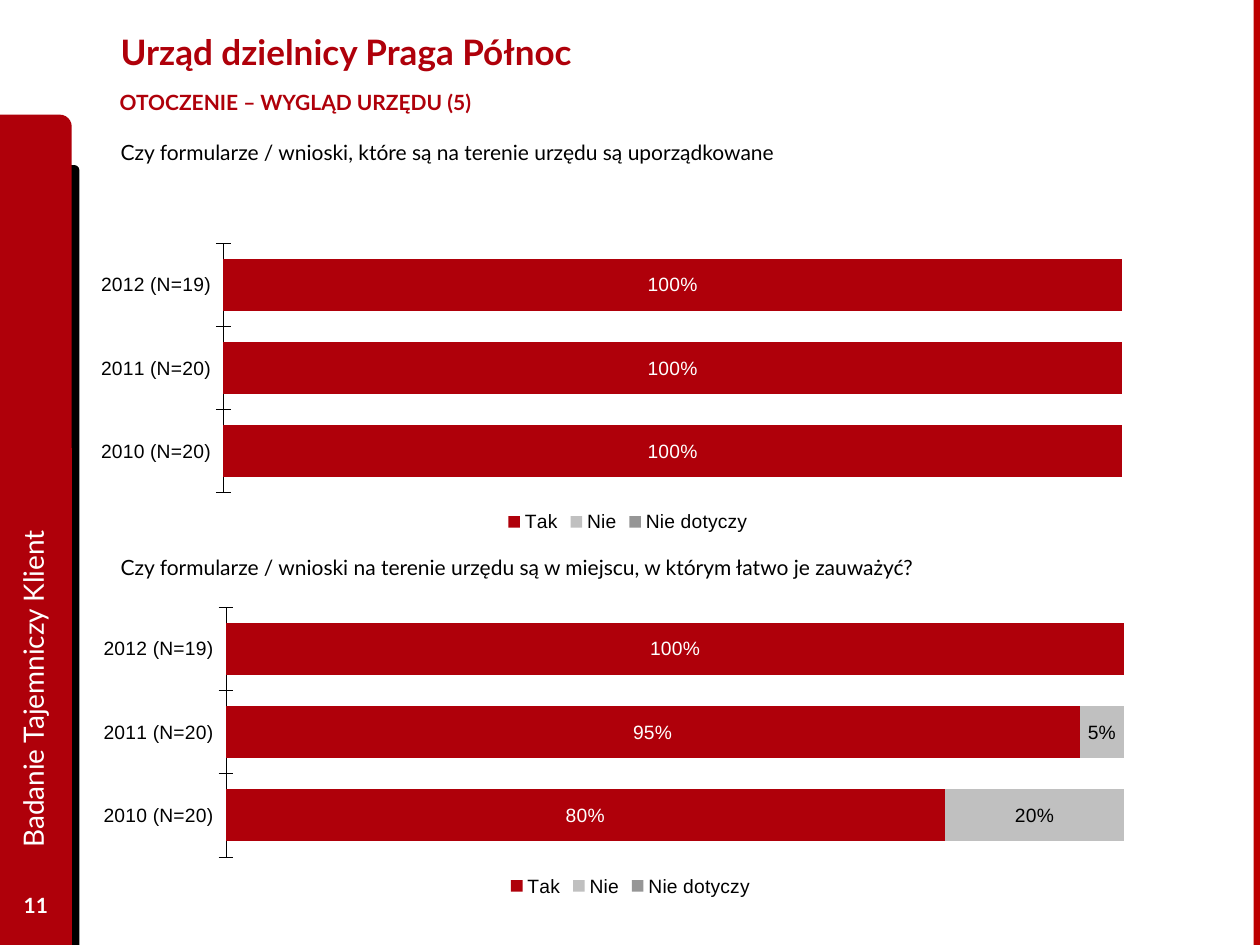
from dataclasses import dataclass

from lxml import etree
from pptx import Presentation
from pptx.chart.chart import Chart
from pptx.chart.data import CategoryChartData
from pptx.dml.color import RGBColor
from pptx.enum.chart import XL_CHART_TYPE, XL_LEGEND_POSITION, XL_TICK_MARK
from pptx.enum.shapes import MSO_SHAPE
from pptx.enum.text import MSO_ANCHOR, PP_ALIGN
from pptx.oxml.ns import qn
from pptx.slide import Slide
from pptx.util import Inches, Pt

RECTANGLE, ROUNDED_CORNER = MSO_SHAPE.RECTANGLE, MSO_SHAPE.ROUND_1_RECTANGLE
TOP, MIDDLE = MSO_ANCHOR.TOP, MSO_ANCHOR.MIDDLE
LEFT, CENTER = PP_ALIGN.LEFT, PP_ALIGN.CENTER
BAR_STACKED = XL_CHART_TYPE.BAR_STACKED
LEGEND_BOTTOM = XL_LEGEND_POSITION.BOTTOM
TICK_CROSS = XL_TICK_MARK.CROSS

COLORS = {
    "black": "000000",
    "white": "FFFFFF",
    "red": "AF000A",
    "stripe": "BD0000",
    "light_gray": "C0C0C0",
    "gray": "969696",
}
TEXT_FONT, CHART_FONT = "Lato", "Arial"
CHART_SIZE = Pt(11)
CATEGORIES = ("2012 (N=19)", "2011 (N=20)", "2010 (N=20)")
ANSWERS = (
    ("Tak", "red", "white"),
    ("Nie", "light_gray", "black"),
    ("Nie dotyczy", "gray", "black"),
)
PLOT_LAYOUT = {"x": 0.119, "y": 0.004, "w": 0.846, "h": 0.843}
NO_ANSWERS = (None, None, None)


@dataclass
class Panel:
    shape: int
    left: float
    top: float
    width: float
    height: float
    color: str


@dataclass
class Label:
    text: str
    left: float
    top: float
    width: float
    height: float
    size: int = 12
    color: str = "black"
    bold: bool = False
    anchor: int = TOP
    align: int = LEFT
    rotation: int = 0
    wrap: bool = True
    side_margin: float = 0.1


@dataclass
class AnswerChart:
    left: float
    top: float
    values: tuple


PANELS = (
    Panel(ROUNDED_CORNER, 0.39, 1.31, 0.24, 6.19, "black"),
    Panel(ROUNDED_CORNER, 0, 0.91, 0.57, 6.59, "red"),
    Panel(RECTANGLE, 9.95, 0, 0.05, 7.5, "stripe"),
)
LABELS = (
    Label("Urząd dzielnicy Praga Północ", 0.86, 0.05, 7.77, 0.72,
          size=20, color="red", bold=True, anchor=MIDDLE),
    Label("Badanie Tajemniczy Klient", -2.62, 3.69, 5.76, 0.51,
          size=16, color="white", anchor=MIDDLE, rotation=270),
    Label("11", 0, 6.98, 0.57, 0.4,
          color="white", bold=True, anchor=MIDDLE, align=CENTER),
    Label("OTOCZENIE – WYGLĄD URZĘDU (5)", 0.75, 0.66, 3.85, 0.33,
          color="red", bold=True, wrap=False, side_margin=0.2),
    Label("Czy formularze / wnioski, które są na terenie urzędu są uporządkowane",
          0.86, 1.06, 5.83, 0.3),
    Label("Czy formularze / wnioski na terenie urzędu są w miejscu, "
          "w którym łatwo je zauważyć?", 0.86, 4.35, 7.87, 0.3),
)
CHARTS = (
    AnswerChart(0.77, 1.92, ((1, 1, 1), NO_ANSWERS, NO_ANSWERS)),
    AnswerChart(0.79, 4.81, ((1, 0.95, 0.8), (None, 0.05, 0.2), NO_ANSWERS)),
)


def rgb(name: str) -> RGBColor:
    return RGBColor.from_string(COLORS[name])


def add_panel(page: Slide, panel: Panel) -> None:
    shape = page.shapes.add_shape(
        panel.shape, Inches(panel.left), Inches(panel.top),
        Inches(panel.width), Inches(panel.height))
    shape.shadow.inherit = False
    shape.fill.solid()
    shape.fill.fore_color.rgb = rgb(panel.color)
    shape.line.fill.background()


def add_label(page: Slide, label: Label) -> None:
    box = page.shapes.add_textbox(
        Inches(label.left), Inches(label.top),
        Inches(label.width), Inches(label.height))
    box.rotation = label.rotation
    frame = box.text_frame
    frame.word_wrap = label.wrap
    frame.vertical_anchor = label.anchor
    frame.margin_left = frame.margin_right = Inches(label.side_margin)
    para = frame.paragraphs[0]
    para.text = label.text
    para.alignment = label.align
    font = para.font
    font.name, font.size, font.bold = TEXT_FONT, Pt(label.size), label.bold
    font.color.rgb = rgb(label.color)


def set_plot_layout(chart: Chart) -> None:
    """Fix the inner plot area as fractions of the chart."""
    plot_area = chart.plots[0]._element.getparent()
    for old_layout in plot_area.findall(qn("c:layout")):
        plot_area.remove(old_layout)
    layout = etree.Element(qn("c:layout"))
    manual = etree.SubElement(layout, qn("c:manualLayout"))
    settings = {"layoutTarget": "inner", "xMode": "edge", "yMode": "edge", **PLOT_LAYOUT}
    for tag, value in settings.items():
        etree.SubElement(manual, qn(f"c:{tag}")).set("val", str(value))
    plot_area.insert(0, layout)


def style_axes(chart: Chart) -> None:
    years = chart.category_axis
    years.reverse_order = True
    years.major_tick_mark = TICK_CROSS
    years.format.line.color.rgb = rgb("black")
    years.format.line.width = Pt(0.23)
    shares = chart.value_axis
    shares.minimum_scale, shares.maximum_scale = 0, 1
    shares.major_unit = 0.2
    shares.has_major_gridlines = False
    shares.visible = False


def add_answer_chart(page: Slide, answer_chart: AnswerChart) -> None:
    data = CategoryChartData(number_format="0%")
    data.categories = CATEGORIES
    for (name, _, _), values in zip(ANSWERS, answer_chart.values):
        data.add_series(name, values)
    chart = page.shapes.add_chart(
        BAR_STACKED, Inches(answer_chart.left), Inches(answer_chart.top),
        Inches(8.43), Inches(2.35), data).chart
    chart.has_title = False
    chart.font.name, chart.font.size = CHART_FONT, CHART_SIZE
    chart.font.color.rgb = rgb("black")
    chart.has_legend = True
    chart.legend.position = LEGEND_BOTTOM
    chart.legend.include_in_layout = False
    style_axes(chart)
    set_plot_layout(chart)

    plot = chart.plots[0]
    plot.vary_by_categories = False
    plot.gap_width, plot.overlap = 60, 100
    for series, (_, fill, text_color) in zip(plot.series, ANSWERS):
        series.format.fill.solid()
        series.format.fill.fore_color.rgb = rgb(fill)
        labels = series.data_labels
        labels.show_value = True
        labels.number_format, labels.number_format_is_linked = "0%", False
        labels.font.name, labels.font.size = CHART_FONT, CHART_SIZE
        labels.font.color.rgb = rgb(text_color)


def main() -> None:
    deck = Presentation()
    deck.slide_width, deck.slide_height = Inches(10), Inches(7.5)
    page = deck.slides.add_slide(deck.slide_layouts[6])
    for panel in PANELS:
        add_panel(page, panel)
    for label in LABELS:
        add_label(page, label)
    for answer_chart in CHARTS:
        add_answer_chart(page, answer_chart)
    deck.save("out.pptx")


if __name__ == "__main__":
    main()
